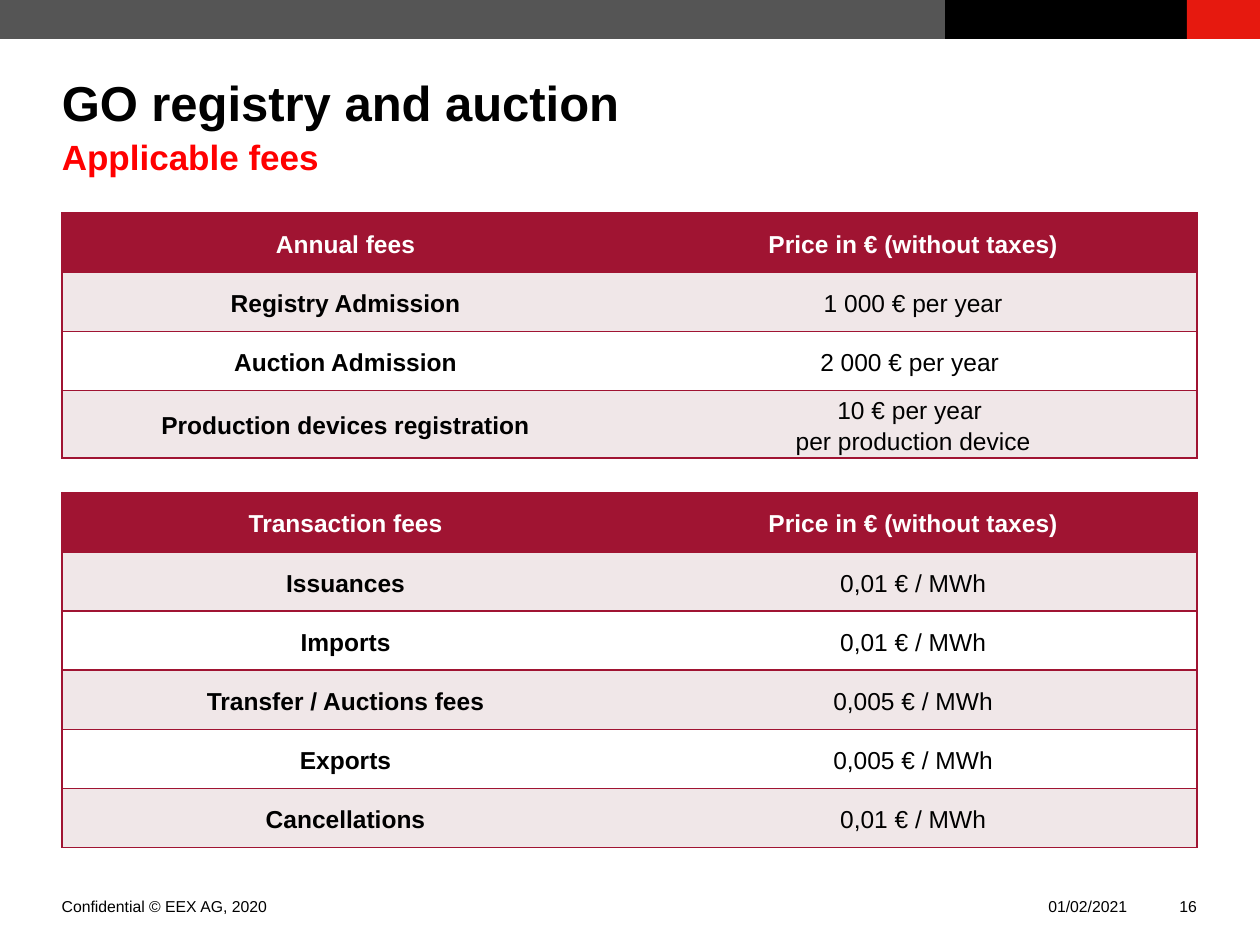
"""Build the slide listing the annual and transaction fees of the GO registry."""
from lxml import etree
from pptx import Presentation, util as u
from pptx.dml.color import RGBColor
from pptx.enum import shapes, text
from pptx.oxml import ns

RED = RGBColor(0xE6, 0x19, 0x0F)
BRIGHT_RED = RGBColor(0xFF, 0, 0)
CRIMSON = RGBColor(0xA0, 0x14, 0x32)
BLUSH = RGBColor(0xF0, 0xE7, 0xE8)
GREY = RGBColor(0x55, 0x55, 0x55)
BLACK = RGBColor(0, 0, 0)
WHITE = RGBColor(0xFF, 0xFF, 0xFF)

FONT = "Arial"
WIDTH, HEIGHT = 10, 7.5
MARGIN, CONTENT = 0.49, 9.01
RIGHT = MARGIN + CONTENT
BAND_HEIGHT, ROW_HEIGHT = 0.31, 0.47
FOOTER_TOP, FOOTER_HEIGHT = 7.09, 0.18

HEADING = [("GO registry and auction", 28, BLACK), ("Applicable fees", 20, BRIGHT_RED)]
BANDS = [(GREY, 7.5), (BLACK, 1.92), (RED, 0.58)]
PRICE = "Price in € (without taxes)"
FEES = [
    (3.91, [
        ("Transaction fees", PRICE),
        ("Issuances", "0,01 € / MWh"),
        ("Imports", "0,01 € / MWh"),
        ("Transfer / Auctions fees", "0,005 € / MWh"),
        ("Exports", "0,005 € / MWh"),
        ("Cancellations", "0,01 € / MWh"),
    ]),
    (1.69, [
        ("Annual fees", PRICE),
        ("Registry Admission", "1 000 € per year"),
        ("Auction Admission", "2 000 € per year "),
        ("Production devices registration", "10 € per year \nper production device"),
    ]),
]
FOOTER = [
    ("Confidential © EEX AG, 2020", MARGIN, 3.17, text.PP_ALIGN.LEFT),
    ("01/02/2021", 8.32, 0.71, text.PP_ALIGN.LEFT),
    ("16", RIGHT - 0.33, 0.33, text.PP_ALIGN.RIGHT),
]


def box(*lengths):
    return [u.Inches(length) for length in lengths]


def add_run(paragraph, words, size, color, bold=False):
    run = paragraph.add_run()
    run.text = words
    run.font.name, run.font.size, run.font.bold = FONT, u.Pt(size), bold
    run.font.color.rgb = color


def clear_insets(frame):
    frame.margin_left = frame.margin_right = frame.margin_top = frame.margin_bottom = 0


def set_borders(cell, first_column):
    hidden = "R" if first_column else "L"
    properties = cell._tc.get_or_add_tcPr()
    for position, side in enumerate("LRTB"):
        line = etree.Element(ns.qn(f"a:ln{side}"), w=str(u.Pt(1)))
        if side == hidden:
            etree.SubElement(line, ns.qn("a:noFill"))
        else:
            fill = etree.SubElement(line, ns.qn("a:solidFill"))
            etree.SubElement(fill, ns.qn("a:srgbClr"), val=str(CRIMSON))
        properties.insert(position, line)


def fill_cell(cell, words, row, column):
    header = row == 0
    cell.fill.solid()
    cell.fill.fore_color.rgb = CRIMSON if header else BLUSH if row % 2 else WHITE
    cell.margin_left = cell.margin_right = u.Inches(0.07)
    cell.margin_top = cell.margin_bottom = 0
    cell.vertical_anchor = text.MSO_ANCHOR.MIDDLE
    for index, line in enumerate(words.split("\n")):
        frame = cell.text_frame
        paragraph = frame.add_paragraph() if index else frame.paragraphs[0]
        paragraph.alignment = text.PP_ALIGN.CENTER
        paragraph.line_spacing = 1.15
        add_run(paragraph, line, 14, WHITE if header else BLACK, header or column == 0)
    set_borders(cell, column == 0)


def add_bands(slide):
    left = 0
    for color, width in BANDS:
        band = slide.shapes.add_shape(
            shapes.MSO_SHAPE.RECTANGLE, *box(left, 0, width, BAND_HEIGHT))
        band.shadow.inherit = False
        band.fill.solid()
        band.fill.fore_color.rgb = color
        band.line.fill.background()
        left += width


def add_heading(slide):
    title = slide.shapes.title
    title.left, title.top, title.width, title.height = box(MARGIN, 0.53, CONTENT, 0.98)
    frame = title.text_frame
    clear_insets(frame)
    frame.auto_size = text.MSO_AUTO_SIZE.NONE
    frame.vertical_anchor = text.MSO_ANCHOR.TOP
    paragraph = frame.paragraphs[0]
    paragraph.alignment = text.PP_ALIGN.LEFT
    paragraph.line_spacing = 1.1
    for index, (words, size, color) in enumerate(HEADING):
        if index:
            paragraph.add_line_break()
        add_run(paragraph, words, size, color, True)


def add_fees(slide, top, rows):
    columns = len(rows[0])
    table = slide.shapes.add_table(
        len(rows), columns, *box(MARGIN, top, CONTENT, ROW_HEIGHT * len(rows))).table
    for column in table.columns:
        column.width = u.Inches(CONTENT / columns)
    for row, entries in enumerate(rows):
        table.rows[row].height = u.Inches(ROW_HEIGHT)
        for column, words in enumerate(entries):
            fill_cell(table.cell(row, column), words, row, column)


def add_footer(slide):
    for words, left, width, alignment in FOOTER:
        frame = slide.shapes.add_textbox(
            *box(left, FOOTER_TOP, width, FOOTER_HEIGHT)).text_frame
        clear_insets(frame)
        frame.word_wrap = True
        frame.vertical_anchor = text.MSO_ANCHOR.BOTTOM
        frame.paragraphs[0].alignment = alignment
        add_run(frame.paragraphs[0], words, 9, BLACK)


def main():
    deck = Presentation()
    deck.slide_width, deck.slide_height = box(WIDTH, HEIGHT)
    slide = deck.slides.add_slide(deck.slide_layouts.get_by_name("Title Only"))
    add_bands(slide)
    add_heading(slide)
    add_footer(slide)
    for top, rows in FEES:
        add_fees(slide, top, rows)
    deck.save("out.pptx")


if __name__ == "__main__":
    main()
